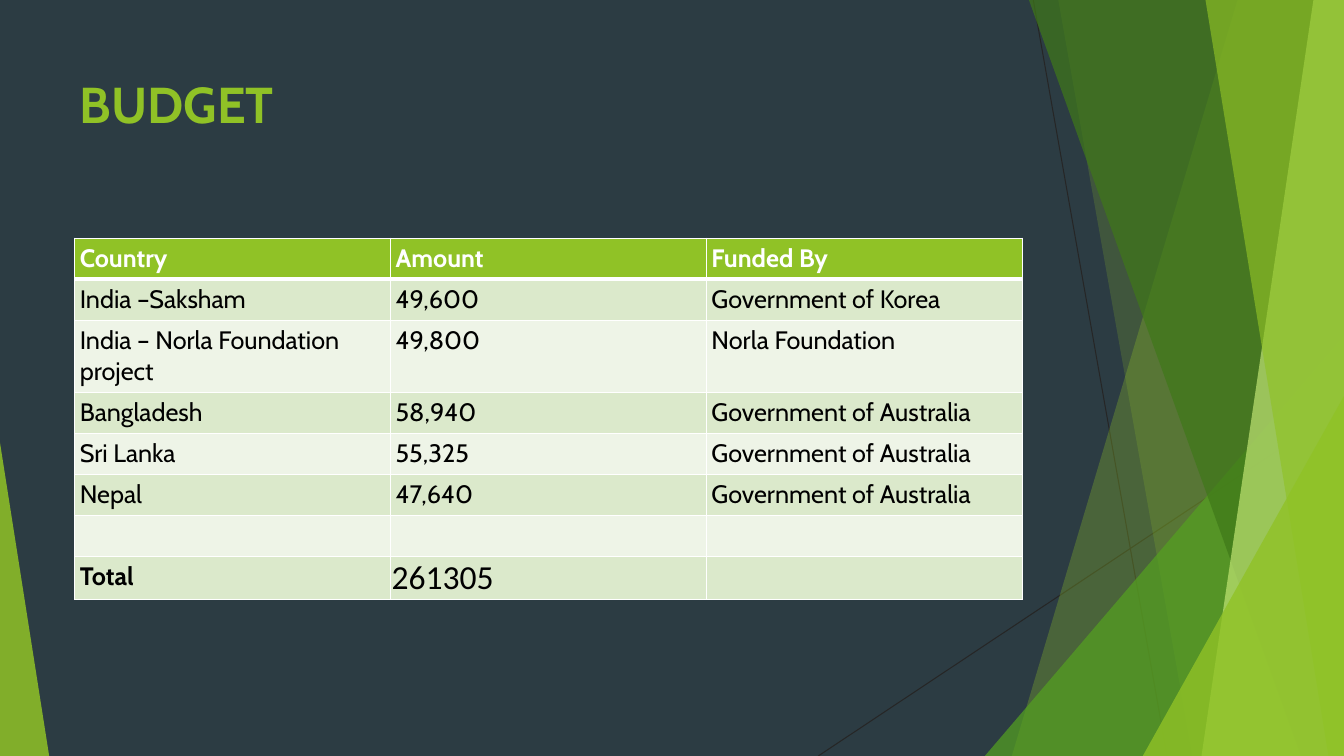
from lxml.etree import SubElement
from pptx import Presentation
from pptx.dml.color import RGBColor
from pptx.enum.shapes import MSO_CONNECTOR
from pptx.enum.text import MSO_ANCHOR, PP_ALIGN
from pptx.oxml.ns import qn
from pptx.util import Cm, Pt

WIDE, HIGH = 33.87, 19.05
GREEN = "90C226"


def paint(fill, color, alpha=100):
    """Fill with a hex colour; alpha is the opacity in percent."""
    fill.solid()
    fill.fore_color.rgb = RGBColor.from_string(color)
    if alpha < 100:
        tint = fill._xPr.find(qn("a:solidFill"))[0]
        SubElement(tint, qn("a:alpha"), val=str(alpha * 1000))


def write(box, text, size, color, bold=False, font="Cabin", gap=0.13):
    """Add one run of text to a shape or cell, with margins of gap cm."""
    frame = box.text_frame
    holder = frame if hasattr(box, "shape_id") else box
    holder.margin_left = holder.margin_right = Cm(gap)
    holder.margin_top = holder.margin_bottom = Cm(gap)
    para = frame.paragraphs[0]
    para.alignment = PP_ALIGN.LEFT
    run = para.add_run()
    run.text = text
    run.font.size = Pt(size)
    run.font.name = font
    run.font.bold = bold
    paint(run.font.fill, color)


deck = Presentation()
deck.slide_width, deck.slide_height = Cm(WIDE), Cm(HIGH)
slide = deck.slides.add_slide(deck.slide_layouts[5])
paint(slide.background.fill, "2C3C43")
shapes = slide.shapes

# Thin lines behind the facets
for ends in [(26.04, 0, 29.41, HIGH), (WIDE, 10.24, 20.62, HIGH)]:
    line = shapes.add_connector(MSO_CONNECTOR.STRAIGHT, *map(Cm, ends))
    line.line.width = Pt(0.75)
    paint(line.line.fill, "262626")
    SubElement(line._element.spPr, qn("a:effectLst"))

# Facets: corner points, colour, opacity
right, base = (WIDE, 0), (WIDE, HIGH)
facets = [
    ([(31.19, 0), right, base, (25.5, HIGH)], GREEN, 30),
    ([(26.67, 0), right, base, (30.05, HIGH)], GREEN, 20),
    ([(24.82, HIGH), (WIDE, 8.46), base], "54A021", 72),
    ([(25.93, 0), right, base, (32.79, HIGH)], "3F7819", 70),
    ([(33.1, 0), right, base, (30.28, HIGH)], "C0E474", 70),
    ([(30.38, 0), right, base, (33.48, HIGH)], GREEN, 65),
    ([(28.8, HIGH), (WIDE, 9.98), base], GREEN, 80),
    ([(0, HIGH), (0, 11.15), (1.24, HIGH)], GREEN, 85),
]
for points, color, alpha in facets:
    first, *rest = [(Cm(x), Cm(y)) for x, y in points]
    path = shapes.build_freeform(*first)
    path.add_line_segments(rest, close=True)
    facet = path.convert_to_shape()
    facet.shadow.inherit = False
    facet.line.fill.background()
    paint(facet.fill, color, alpha)

# Title
title = shapes.title
title.left, title.top = Cm(1.88), Cm(1.7)
title.width, title.height = Cm(23.88), Cm(3.66)
title.text_frame.vertical_anchor = MSO_ANCHOR.TOP
title.text_frame.word_wrap = True
write(title, "BUDGET", 36, GREEN, True)

# Budget table
rows = [
    ("Country", "Amount", "Funded By"),
    ("India –Saksham", "49,600", "Government of Korea"),
    ("India – Norla Foundation project", "49,800", "Norla Foundation"),
    ("Bangladesh", "58,940", "Government of Australia"),
    ("Sri Lanka", "55,325", "Government of Australia"),
    ("Nepal", "47,640", "Government of Australia"),
    ("", "", ""),
    ("Total", "261305", ""),
]
frame = shapes.add_table(len(rows), 3, Cm(1.88), Cm(6), Cm(23.88), Cm(8.24))
table = frame.table
table.first_row = table.horz_banding = False
for col in table.columns:
    col.width = Cm(7.96)
for r, row in enumerate(rows):
    table.rows[r].height = Cm(1.03)
    for c, text in enumerate(row):
        cell = table.cell(r, c)
        props = cell._tc.get_or_add_tcPr()
        for side in "LRTB":
            thick = (r, side) in [(0, "B"), (1, "T")]
            edge = SubElement(props, qn(f"a:ln{side}"), w=str(Pt(3 if thick else 1)))
            SubElement(SubElement(edge, qn("a:solidFill")), qn("a:srgbClr"), val="FFFFFF")
        paint(cell.fill, GREEN if r == 0 else "DBE9CB" if r % 2 else "EEF4E7")
        if text == "261305":
            write(cell, text, 24, "000000", font="Calibri", gap=0.03)
            cell.vertical_anchor = MSO_ANCHOR.BOTTOM
        elif text:
            write(cell, text, 18, "000000" if r else "FFFFFF", r == 0 or text == "Total")

deck.save("out.pptx")
